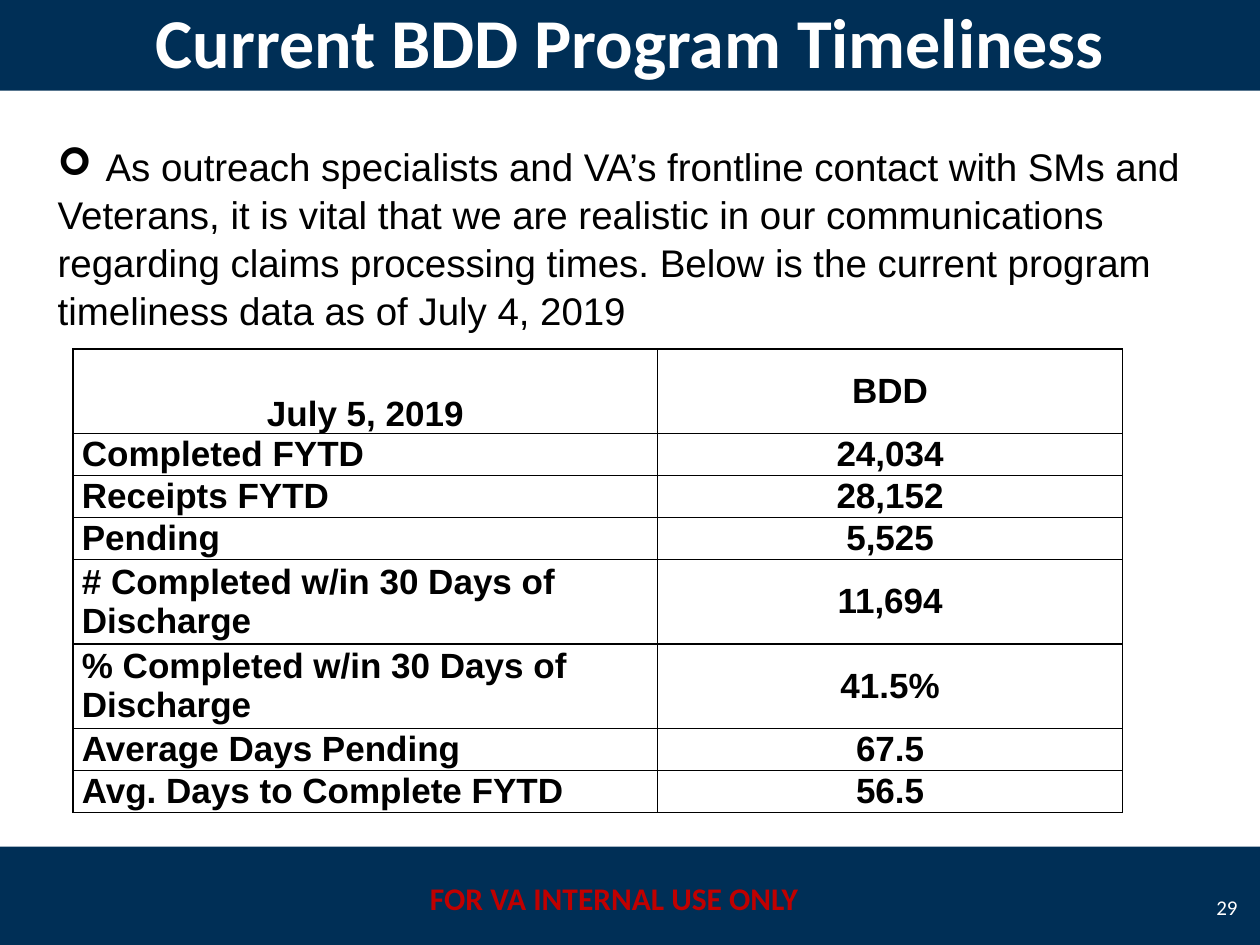
"""Build the slide on current BDD program timeliness."""
from dataclasses import dataclass

from lxml import etree
from pptx import Presentation
from pptx import util as u
from pptx.dml.color import RGBColor
from pptx.enum import shapes, text
from pptx.oxml import ns


@dataclass(frozen=True)
class Theme:
    navy: str = "002F56"
    white: str = "FFFFFF"
    black: str = "000000"
    red: str = "C00000"
    heading_font: str = "Calibri"
    body_font: str = "Arial"
    title_size: int = 40
    body_size: int = 22
    table_size: int = 20
    footer_size: int = 18
    number_size: int = 12


theme = Theme()
align = text.PP_ALIGN
anchor = text.MSO_ANCHOR


def style(para, name, size, color, bold=False, alignment=align.LEFT):
    para.alignment = alignment
    for span in para.runs:
        span.font.name = name
        span.font.size = u.Pt(size)
        span.font.bold = bold
        span.font.color.rgb = RGBColor.from_string(color)


def add_border(cell, side):
    line = etree.SubElement(cell._tc.get_or_add_tcPr(), ns.qn(f"a:{side}"), w=str(u.Pt(1)))
    fill = etree.SubElement(line, ns.qn("a:solidFill"))
    etree.SubElement(fill, ns.qn("a:srgbClr"), val=theme.black)


deck = Presentation()
deck.slide_width, deck.slide_height = u.Inches(10), u.Inches(7.5)
page = deck.slides.add_slide(deck.slide_layouts[6])

for top in (6.72, -0.08):
    band = page.shapes.add_shape(
        shapes.MSO_SHAPE.RECTANGLE, 0, u.Inches(top), u.Inches(10), u.Inches(0.8))
    band.shadow.inherit = False
    band.fill.solid()
    band.fill.fore_color.rgb = RGBColor.from_string(theme.navy)
    band.line.fill.background()

labels = [
    ("FOR VA INTERNAL USE ONLY", (3.25, 6.93, 3.25, 0.4), theme.footer_size, theme.red,
     True, align.CENTER, anchor.TOP),
    ("Current BDD Program Timeliness", (0, -0.08, 10, 0.8), theme.title_size, theme.white,
     True, align.CENTER, anchor.MIDDLE),
    ("29", (9.5, 7, 0.42, 0.4), theme.number_size, theme.white,
     False, align.RIGHT, anchor.MIDDLE),
]
for words, place, size, color, bold, alignment, vertical in labels:
    box = page.shapes.add_textbox(*map(u.Inches, place))
    frame = box.text_frame
    frame.word_wrap = True
    frame.vertical_anchor = vertical
    frame.text = words
    style(frame.paragraphs[0], theme.heading_font, size, color, bold, alignment)

intro = page.shapes.add_textbox(u.Inches(0.36), u.Inches(1.07), u.Inches(9.5), u.Inches(1.58))
intro.text_frame.word_wrap = True
intro.text_frame.text = (
    "As outreach specialists and VA’s frontline contact with SMs and\n"
    "Veterans, it is vital that we are realistic in our communications regarding claims "
    "processing times. Below is the current program timeliness data as of July 4, 2019"
)
for para in intro.text_frame.paragraphs:
    para.line_spacing = 1.04
    style(para, theme.body_font, theme.body_size, theme.black)
bullet = intro.text_frame.paragraphs[0]._p.get_or_add_pPr()
bullet.set("marL", str(u.Inches(0.38)))
bullet.set("indent", str(u.Inches(-0.38)))
etree.SubElement(bullet, ns.qn("a:buFont"), typeface="Wingdings")
etree.SubElement(bullet, ns.qn("a:buChar"), char="➢")

rows = [
    ("July 5, 2019", "BDD", 0.67),
    ("Completed FYTD", "24,034", 0.33),
    ("Receipts FYTD", "28,152", 0.33),
    ("Pending", "5,525", 0.33),
    ("# Completed w/in 30 Days of Discharge", "11,694", 0.67),
    ("% Completed w/in 30 Days of Discharge", "41.5%", 0.67),
    ("Average Days Pending", "67.5", 0.33),
    ("Avg. Days to Complete FYTD", "56.5", 0.33),
]
table = page.shapes.add_table(
    len(rows), 2, u.Inches(0.58), u.Inches(2.77), u.Inches(8.33), u.Inches(3.66)).table
table.first_row = table.horz_banding = False
for column, width in zip(table.columns, (4.64, 3.69)):
    column.width = u.Inches(width)
for row_index, (label, value, height) in enumerate(rows):
    table.rows[row_index].height = u.Inches(height)
    for column_index, words in enumerate((label, value)):
        cell = table.cell(row_index, column_index)
        is_date = row_index == column_index == 0
        is_label = column_index == 0 and row_index > 0
        cell.text_frame.text = words
        cell.margin_left = cell.margin_right = u.Inches(0.07)
        cell.margin_top = cell.margin_bottom = 0
        cell.vertical_anchor = anchor.BOTTOM if is_date else anchor.MIDDLE
        style(cell.text_frame.paragraphs[0], theme.body_font, theme.table_size, theme.black,
              True, align.LEFT if is_label else align.CENTER)
        for side in ("lnL", "lnR", "lnT", "lnB"):
            add_border(cell, side)
        cell.fill.background()

deck.save("out.pptx")
